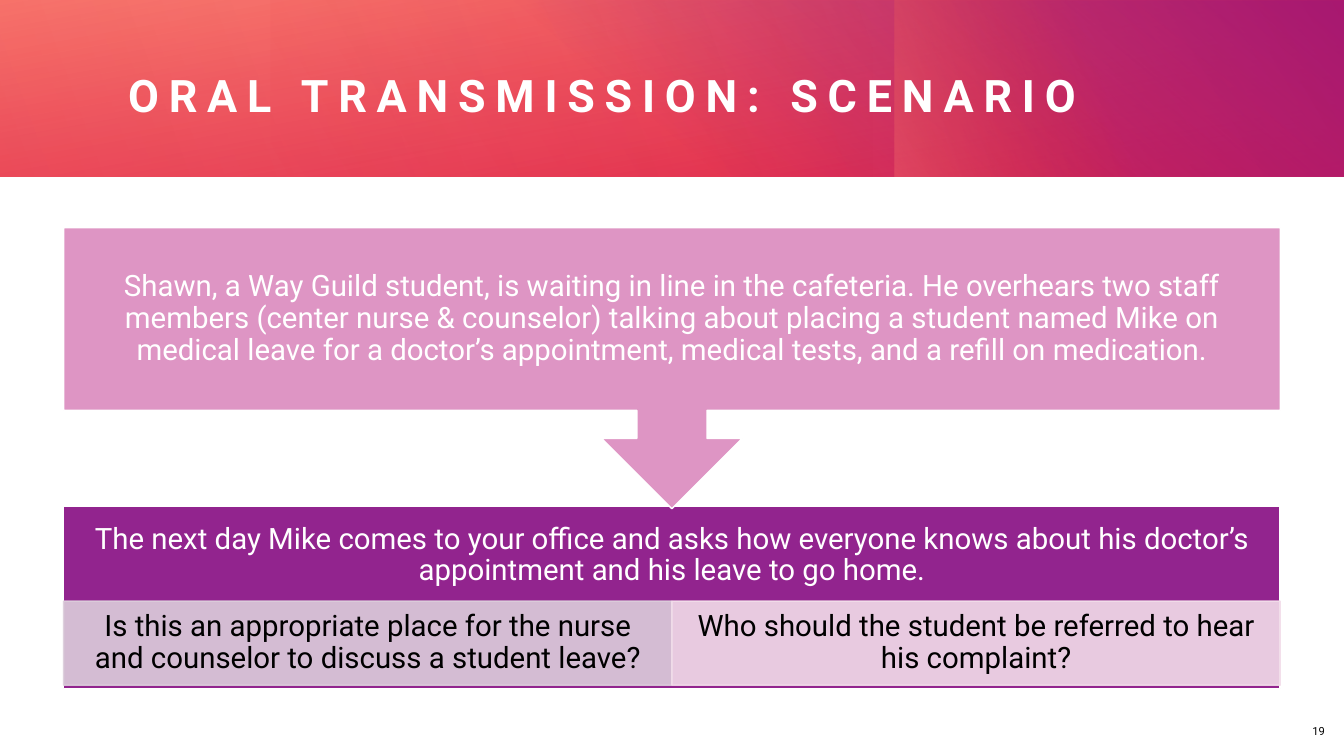
import pptx
import pptx.util
import pptx.dml.color
import pptx.enum.shapes
import pptx.enum.text
import pptx.oxml
from pptx.oxml.ns import qn, nsdecls

Pt = pptx.util.Pt
SHAPE = pptx.enum.shapes.MSO_SHAPE
ALIGN = pptx.enum.text.PP_ALIGN
MIDDLE = pptx.enum.text.MSO_ANCHOR.MIDDLE
FONT = "Roboto"
WHITE, BLACK, PURPLE, PINK = "FFFFFF", "000000", "92248E", "DE95C4"
RED, CORAL, ORANGE = "DA002F", "FF907A", "FE4A00"

# Left, top, width, height, rotation, gradient angle, stops (position, colour, opacity)
BANNER = [
    (0, 0, 960, 126, 0, 260, [(0, RED, 83), (100, CORAL, 100)]),
    (346.5, 0.5, 613.5, 125.5, 0, 310, [(22, PURPLE, 0), (99, PURPLE, 100)]),
    (710.5, -71.5, 126, 269, 270, 250, [(45, ORANGE, 0), (99, CORAL, 33)]),
    (193, 0, 766.5, 126, 180, 330, [(0, RED, 30), (99, RED, 0)]),
    (0, 0, 623, 126, 0, 340, [(0, RED, 21), (99, RED, 0)]),
]

SCENARIO = (
    "Shawn, a Way Guild student, is waiting in line in the cafeteria. He overhears "
    "two staff members (center nurse & counselor) talking about placing a student "
    "named Mike on medical leave for a doctor’s appointment, medical tests, and a "
    "refill on medication."
)
NEXT_DAY = (
    "The next day Mike comes to your office and asks how everyone knows about his "
    "doctor’s appointment and his leave to go home."
)
QUESTIONS = [
    ("Is this an appropriate place for the nurse and counselor to discuss a student leave?",
     "DCCDDB"),
    ("Who should the student be referred to hear his complaint?", "F2DDEA"),
]

LEFT, WIDTH = 45.5, 869
QUESTION_TOP, QUESTION_HEIGHT = 429.4, 60


def rgb(color):
    return pptx.dml.color.RGBColor.from_string(color)


def set_opacity(fill_format, percent):
    color = fill_format.fore_color
    color_xml = color._xFill.find(qn("a:srgbClr"))
    color_xml.append(pptx.oxml.parse_xml(
        f'<a:alpha {nsdecls("a")} val="{percent * 1000}"/>'))


def add_banner_layer(s, left, top, width, height, rotation, angle, stops):
    """Add a borderless rectangle with a translucent linear gradient."""
    sp = s.shapes.add_shape(SHAPE.RECTANGLE, Pt(left), Pt(top), Pt(width), Pt(height))
    sp.shadow.inherit = False
    sp.rotation = rotation
    sp.line.fill.background()
    stops_xml = "".join(
        f'<a:gs pos="{pos * 1000}"><a:srgbClr val="{color}">'
        f'<a:alpha val="{opacity * 1000}"/></a:srgbClr></a:gs>'
        for pos, color, opacity in stops)
    gradient = pptx.oxml.parse_xml(
        f'<a:gradFill {nsdecls("a")} rotWithShape="1"><a:gsLst>{stops_xml}</a:gsLst>'
        f'<a:lin ang="{angle * 60000}" scaled="0"/></a:gradFill>')
    sp._element.spPr.find(qn("a:prstGeom")).addnext(gradient)


def set_text(sp, text, size, color, align, insets, bold=False, spacing=None):
    """Fill a shape with one paragraph; insets are left, top, right, bottom."""
    tf = sp.text_frame
    left, top, right, bottom = (Pt(inset) for inset in insets)
    frame_format = {"word_wrap": True, "vertical_anchor": MIDDLE,
                    "auto_size": pptx.enum.text.MSO_AUTO_SIZE.NONE,
                    "margin_left": left, "margin_top": top,
                    "margin_right": right, "margin_bottom": bottom}
    for name, value in frame_format.items():
        setattr(tf, name, value)
    p = tf.paragraphs[0]
    p.alignment = align
    p.line_spacing = spacing
    r = p.add_run()
    r.text = text
    for name, value in {"name": FONT, "size": Pt(size), "bold": bold}.items():
        setattr(r.font, name, value)
    r.font.color.rgb = rgb(color)
    return r


def add_box(s, kind, box, fill, line, text, color, insets, opacity=100):
    sp = s.shapes.add_shape(kind, *(Pt(length) for length in box))
    sp.shadow.inherit = False
    sp.fill.solid()
    sp.fill.fore_color.rgb = rgb(fill)
    sp.line.color.rgb = rgb(line)
    sp.line.width = Pt(1)
    if opacity < 100:
        for fill_format in (sp.fill, sp.line.fill):
            set_opacity(fill_format, opacity)
    set_text(sp, text, 21, color, ALIGN.CENTER, insets, spacing=0.9)


def add_title(s, text):
    sp = s.shapes.title
    sp.left, sp.top, sp.width, sp.height = Pt(91.5), Pt(29.5), Pt(817), Pt(76.5)
    r = set_text(sp, text, 32, WHITE, ALIGN.LEFT, (0, 0, 0, 0), bold=True)
    r.font._element.set("spc", "700")
    s.shapes._spTree.append(sp._element)  # bring in front of the banner


def add_slide_number(s, number):
    sp = s.shapes.add_textbox(Pt(918.5), Pt(504.5), Pt(35), Pt(35.5))
    set_text(sp, number, 8, BLACK, ALIGN.RIGHT, (7.2, 3.6, 7.2, 3.6))
    sp.text_frame.paragraphs[0].space_after = Pt(6)


def main():
    prs = pptx.Presentation()
    prs.slide_width, prs.slide_height = Pt(960), Pt(540)
    s = prs.slides.add_slide(prs.slide_layouts[5])

    for layer in BANNER:
        add_banner_layer(s, *layer)
    add_title(s, "ORAL TRANSMISSION: SCENARIO")
    add_slide_number(s, "19")

    # The bottom inset keeps the text above the row of questions
    add_box(s, SHAPE.RECTANGLE, (LEFT, 361.5, WIDTH, 130.5), PURPLE, WHITE,
            NEXT_DAY, WHITE, (11.5, 11.5, 11.5, 71.5))
    question_width = WIDTH / len(QUESTIONS)
    for i, (question, fill) in enumerate(QUESTIONS):
        box = (LEFT + i * question_width, QUESTION_TOP, question_width, QUESTION_HEIGHT)
        add_box(s, SHAPE.RECTANGLE, box, fill, fill, question, BLACK,
                (11.5, 2, 11.5, 2), opacity=90)
    add_box(s, SHAPE.DOWN_ARROW_CALLOUT, (LEFT, 162.7, WIDTH, 200.7), PINK, WHITE,
            SCENARIO, WHITE, (11.5, 11.5, 11.5, 11.5))

    prs.save("out.pptx")


if __name__ == "__main__":
    main()
